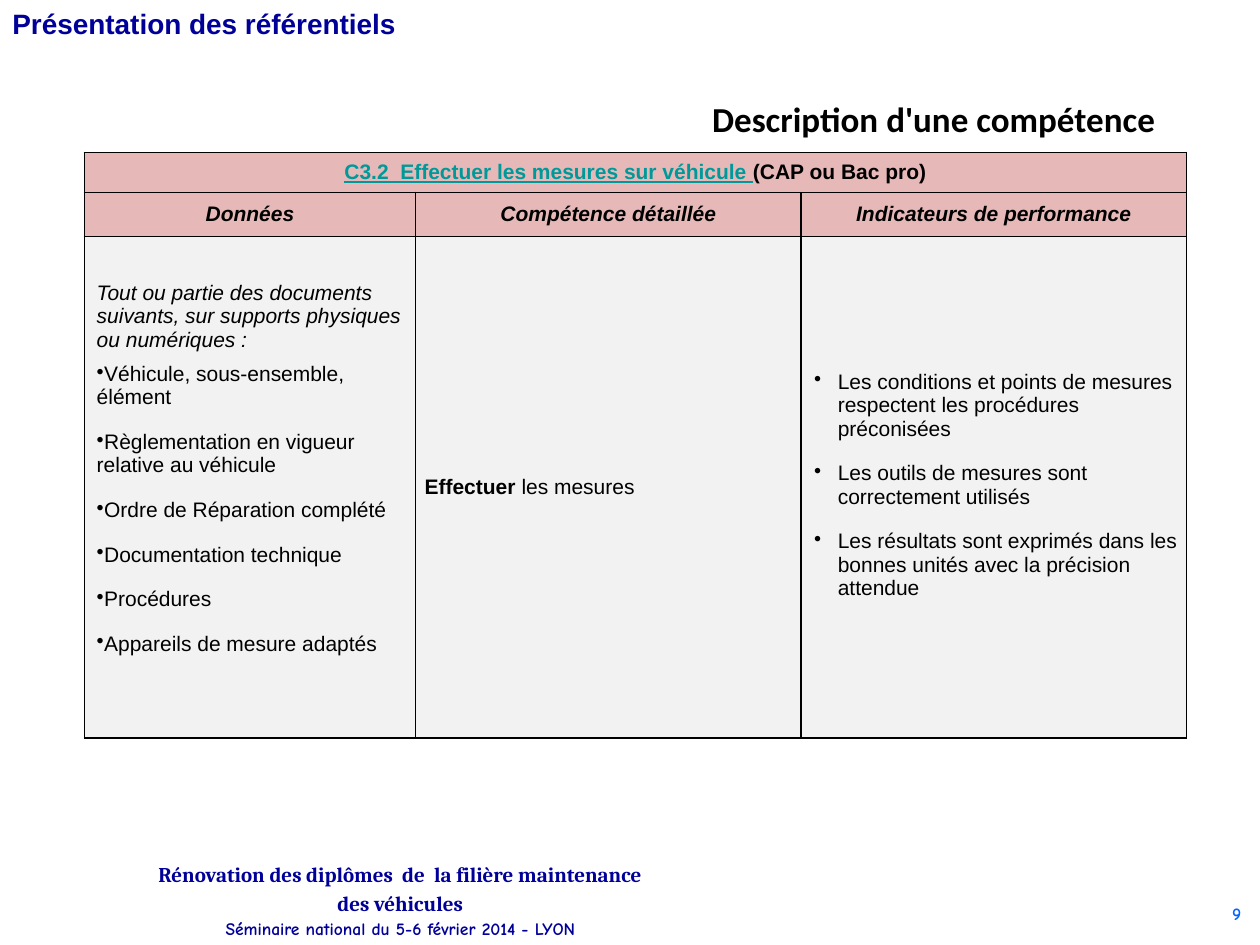
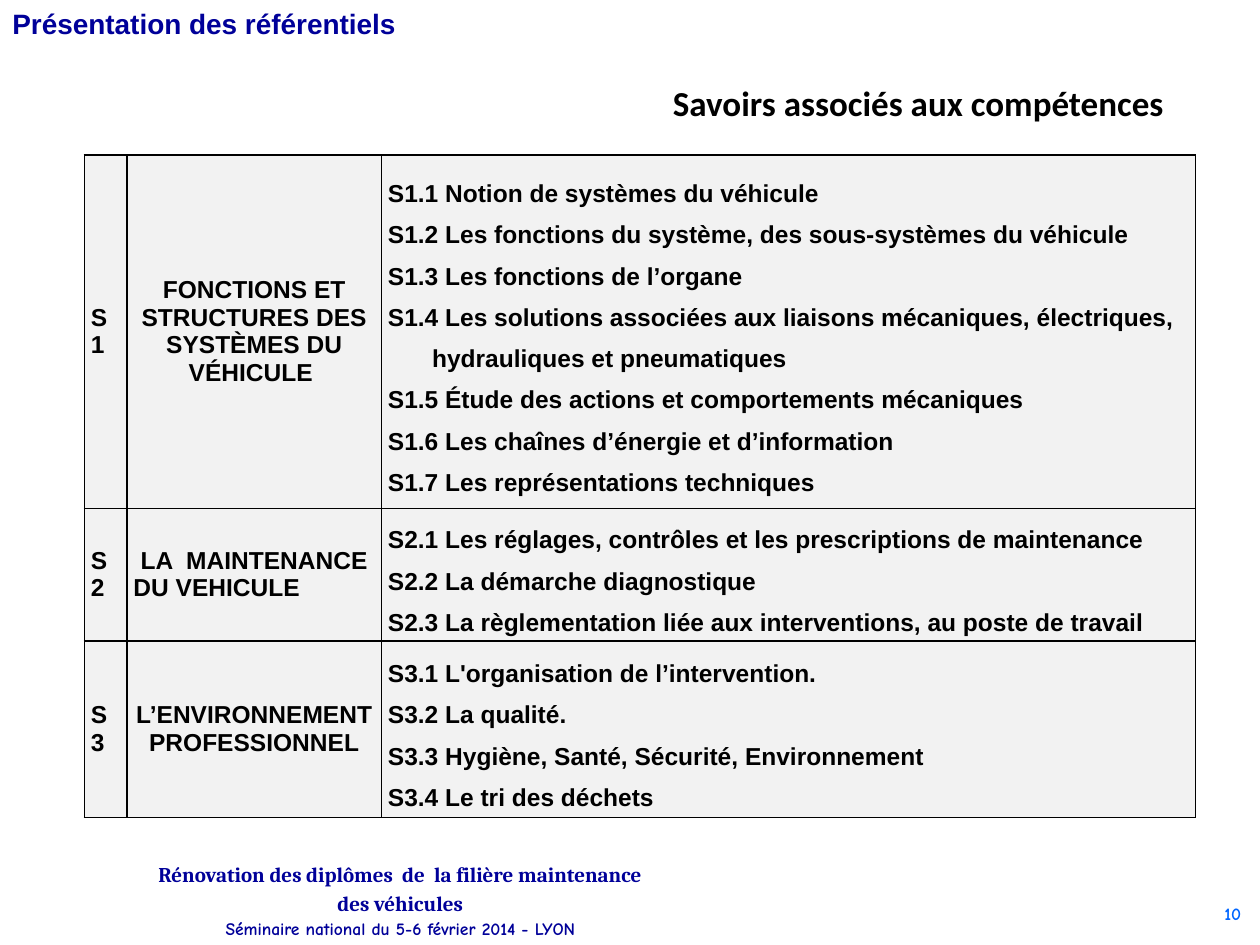
from dataclasses import dataclass, replace

from lxml.etree import SubElement
from pptx import Presentation
from pptx.dml.color import RGBColor
from pptx.enum.text import MSO_ANCHOR, MSO_AUTO_SIZE, PP_ALIGN
from pptx.oxml.ns import qn
from pptx.util import Cm, Pt

NAVY = RGBColor(0x00, 0x00, 0x99)
BLUE = RGBColor(0x00, 0x66, 0xFF)
TEAL = RGBColor(0x00, 0x99, 0x99)
BLACK = RGBColor(0x00, 0x00, 0x00)
ROSE = RGBColor(0xE6, 0xB9, 0xB8)
PALE_GREY = RGBColor(0xF2, 0xF2, 0xF2)


@dataclass(frozen=True)
class Style:
    size: float
    name: str = "Arial"
    color: RGBColor = BLACK
    bold: bool = False
    italic: bool = False
    underline: bool = False


@dataclass(frozen=True)
class Para:
    spans: tuple[tuple[str, Style], ...]
    align: PP_ALIGN = PP_ALIGN.LEFT
    before: float = 0
    after: float = 0
    spacing: float = 1.0
    left: float = 0
    indent: float = 0
    bullet: bool = False


@dataclass(frozen=True)
class CellSpec:
    paras: list[Para]
    fill: RGBColor = PALE_GREY
    anchor: MSO_ANCHOR = MSO_ANCHOR.MIDDLE
    top: float = 0
    side: float = 0


@dataclass(frozen=True)
class TableSpec:
    left: float
    top: float
    columns: list[float]
    rows: list[float]
    cells: list[list[CellSpec]]


@dataclass(frozen=True)
class PageSpec:
    number: int
    title: str
    title_place: tuple[float, float, float, float]
    table: TableSpec


HEADER = Style(16, color=NAVY, bold=True)
TITLE = Style(20, "Calibri", bold=True)
FOOTER = Style(12, "Cambria", NAVY, bold=True)
EVENT = Style(10, "Comic Neue", NAVY, bold=True)
NUMBER = Style(10, "Comic Neue", BLUE, bold=True)
BODY = Style(12)
STRONG = Style(12, bold=True)
LINKED = Style(12, color=TEAL, bold=True, underline=True)
COLUMN_HEAD = Style(12, bold=True, italic=True)
KNOWLEDGE = Style(14, bold=True)


def line(text: str, style: Style, **layout) -> Para:
    return Para(((text, style),), **layout)


def centred(text: str, style: Style, **layout) -> Para:
    return line(text, style, align=PP_ALIGN.CENTER, **layout)


# Drawing
def set_font(font, style: Style) -> None:
    font.size, font.name = Pt(style.size), style.name
    font.bold, font.italic, font.underline = style.bold, style.italic, style.underline
    font.color.rgb = style.color


def write(frame, paras: list[Para]) -> None:
    for index, para in enumerate(paras):
        paragraph = frame.add_paragraph() if index else frame.paragraphs[0]
        paragraph.alignment = para.align
        paragraph.line_spacing = para.spacing
        paragraph.space_before = Pt(para.before)
        paragraph.space_after = Pt(para.after)
        properties = paragraph._p.get_or_add_pPr()
        properties.set("marL", str(Cm(para.left)))
        properties.set("indent", str(Cm(para.indent)))
        if para.bullet:
            SubElement(properties, qn("a:buChar"), char="•")
        else:
            SubElement(properties, qn("a:buNone"))
        for text, style in para.spans:
            span = paragraph.add_run()
            span.text = text
            if len(para.spans) > 1:
                set_font(span.font, style)
        if len(para.spans) == 1:
            set_font(paragraph.font, para.spans[0][1])


def add_text(page, place: tuple[float, float, float, float], paras: list[Para],
             anchor: MSO_ANCHOR = MSO_ANCHOR.TOP) -> None:
    box = page.shapes.add_textbox(*map(Cm, place))
    box.text_frame.word_wrap = True
    box.text_frame.vertical_anchor = anchor
    write(box.text_frame, paras)


def add_borders(cell) -> None:
    properties = cell._tc.get_or_add_tcPr()
    for side in ("lnL", "lnR", "lnT", "lnB"):
        border = SubElement(properties, qn(f"a:{side}"), w=str(Pt(1)))
        fill = SubElement(border, qn("a:solidFill"))
        SubElement(fill, qn("a:srgbClr"), val=str(BLACK))


def fill_cell(cell, spec: CellSpec) -> None:
    add_borders(cell)
    cell.fill.solid()
    cell.fill.fore_color.rgb = spec.fill
    cell.vertical_anchor = spec.anchor
    cell.margin_left = cell.margin_right = Cm(spec.side)
    cell.margin_top, cell.margin_bottom = Cm(spec.top), 0
    write(cell.text_frame, spec.paras)


def add_grid(page, spec: TableSpec) -> None:
    frame = page.shapes.add_table(
        len(spec.rows), len(spec.columns), Cm(spec.left), Cm(spec.top),
        Cm(sum(spec.columns)), Cm(sum(spec.rows)))
    table = frame.table
    table.first_row = table.horz_banding = False
    for column, width in zip(table.columns, spec.columns):
        column.width = Cm(width)
    for row, height in zip(table.rows, spec.rows):
        row.height = Cm(height)
    for row_index, row_cells in enumerate(spec.cells):
        # A row with a single cell spans every column
        if len(row_cells) == 1:
            table.cell(row_index, 0).merge(table.cell(row_index, len(spec.columns) - 1))
            row_cells = row_cells + [replace(row_cells[0], paras=[])] * (len(spec.columns) - 1)
        for column_index, cell_spec in enumerate(row_cells):
            fill_cell(table.cell(row_index, column_index), cell_spec)


def add_page(deck, spec: PageSpec) -> None:
    page = deck.slides.add_slide(deck.slide_layouts[5])
    # Shared header, footer and page number
    add_text(page, (0, 0, 8.31, 0.94), [line("Présentation des référentiels", HEADER)])
    add_text(page, (2.9, 17.4, 10.34, 1.42), [
        centred("Rénovation des diplômes  de  la filière maintenance des véhicules",
                FOOTER, spacing=1.15),
        centred("Séminaire national du 5-6 février 2014 - LYON", EVENT, spacing=1.15),
    ], MSO_ANCHOR.MIDDLE)
    add_text(page, (23.75, 18.08, 1.52, 0.81),
             [line(str(spec.number), NUMBER, align=PP_ALIGN.RIGHT)])
    # Title
    title = page.shapes.title
    title.left, title.top, title.width, title.height = map(Cm, spec.title_place)
    title.text_frame.word_wrap = False
    title.text_frame.auto_size = MSO_AUTO_SIZE.NONE
    title.text_frame.vertical_anchor = MSO_ANCHOR.TOP
    write(title.text_frame, [line(spec.title, TITLE)])
    add_grid(page, spec.table)


# Skill description
DOCUMENTS = [
    "Véhicule, sous-ensemble, élément",
    "Règlementation en vigueur relative au véhicule",
    "Ordre de Réparation complété",
    "Documentation technique",
    "Procédures",
    "Appareils de mesure adaptés",
]
INDICATORS = [
    "Les conditions et points de mesures respectent les procédures préconisées",
    "Les outils de mesures sont correctement utilisés",
    "Les résultats sont exprimés dans les bonnes unités avec la précision attendue",
]
COLUMN_HEADS = ["Données", "Compétence détaillée", "Indicateurs de performance"]

given = [line("Tout ou partie des documents suivants, sur supports physiques ou numériques :",
              replace(BODY, italic=True), left=0.25)]
given += [line(text, BODY, left=0.25, before=6, after=6, bullet=True) for text in DOCUMENTS]
indicators = [line(text, BODY, left=0.74, indent=-0.48, before=12 if index else 0, bullet=True)
              for index, text in enumerate(INDICATORS)]
skill = Para((("C3.2  Effectuer les mesures sur véhicule ", LINKED),
              ("(CAP ou Bac pro)", STRONG)), align=PP_ALIGN.CENTER)
task = Para((("Effectuer ", STRONG), ("les mesures", BODY)), left=0.18)

skill_table = TableSpec(1.7, 3.07, [6.68, 7.77, 7.77], [0.81, 0.89, 10.11], [
    [CellSpec([skill], ROSE)],
    [CellSpec([centred(head, COLUMN_HEAD)], ROSE) for head in COLUMN_HEADS],
    [CellSpec(given, anchor=MSO_ANCHOR.TOP, top=0.9),
     CellSpec([task]),
     CellSpec(indicators, anchor=MSO_ANCHOR.TOP, top=2.69)],
])

# Knowledge areas
AREAS = [
    ("S1", [centred("FONCTIONS ET STRUCTURES DES SYSTÈMES DU VÉHICULE ", KNOWLEDGE)], [
        "Notion de systèmes du véhicule",
        "Les fonctions du système, des sous-systèmes du véhicule",
        "Les fonctions de l’organe",
        "Les solutions associées aux liaisons mécaniques, électriques, "
        "hydrauliques et pneumatiques",
        "Étude des actions et comportements mécaniques",
        "Les chaînes d’énergie et d’information",
        "Les représentations techniques",
    ]),
    ("S2", [centred("LA  MAINTENANCE", KNOWLEDGE), line("DU VEHICULE", KNOWLEDGE)], [
        "Les réglages, contrôles et les prescriptions de maintenance",
        "La démarche diagnostique",
        "La règlementation liée aux interventions, au poste de travail",
    ]),
    ("S3", [centred("L’ENVIRONNEMENT PROFESSIONNEL", KNOWLEDGE)], [
        "L'organisation de l’intervention.",
        "La qualité.",
        "Hygiène, Santé, Sécurité, Environnement",
        "Le tri des déchets",
    ]),
]


def area_row(code: str, name: list[Para], topics: list[str]) -> list[CellSpec]:
    listed = [line(f"{code}.{index} {topic}", KNOWLEDGE, spacing=1.5, left=0.89, indent=-0.89)
              for index, topic in enumerate(topics, 1)]
    return [CellSpec(paras, side=0.13) for paras in ([line(code, KNOWLEDGE)], name, listed)]


knowledge_table = TableSpec(1.7, 3.12, [0.86, 5.13, 16.41], [7.13, 2.67, 3.56],
                            [area_row(*area) for area in AREAS])

PAGES = [
    PageSpec(9, "Description d'une compétence", (14.1, 1.83, 9.8, 1.12), skill_table),
    PageSpec(10, "Savoirs associés aux compétences", (13.31, 1.52, 10.49, 1.12),
             knowledge_table),
]


def main() -> None:
    deck = Presentation()
    deck.slide_width, deck.slide_height = Cm(25.4), Cm(19.05)
    for spec in PAGES:
        add_page(deck, spec)
    deck.save("out.pptx")


if __name__ == "__main__":
    main()
